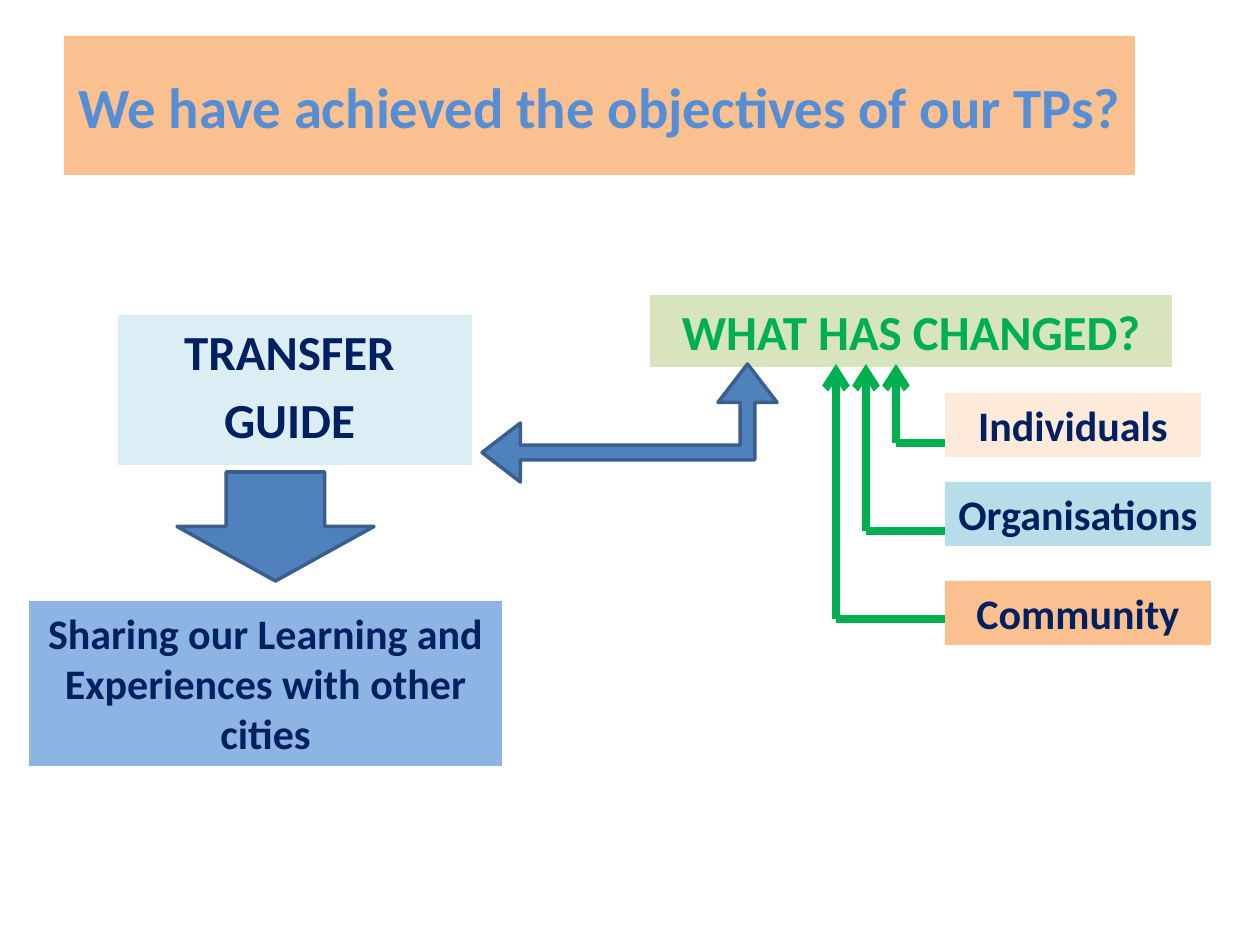
from lxml.etree import SubElement
from pptx import Presentation
from pptx.dml.color import RGBColor
from pptx.enum.shapes import MSO_CONNECTOR, MSO_SHAPE
from pptx.enum.text import MSO_ANCHOR, PP_ALIGN
from pptx.oxml.ns import qn
from pptx.util import Emu, Pt

PX = 914400 / 126
COLORS = {
    "orange": "FAC090", "title": "558ED5", "pale": "DBEEF4", "navy": "002060",
    "sky": "8EB4E3", "blue": "4F81BD", "edge": "3A5F8C", "lime": "D7E4BD",
    "green": "00B050", "peach": "FDEADA", "aqua": "B7DEE8",
}
HUES = {name: RGBColor.from_string(code) for name, code in COLORS.items()}

deck = Presentation()
deck.slide_width, deck.slide_height = Emu(round(1260 * PX)), Emu(round(945 * PX))
slide = deck.slides.add_slide(deck.slide_layouts[6])


def add_shape(kind, box, fill):
    shape = slide.shapes.add_shape(kind, *(Emu(round(n * PX)) for n in box))
    shape.shadow.inherit = False
    shape.fill.solid()
    shape.fill.fore_color.rgb = HUES[fill]
    shape.line.fill.background()
    return shape


def add_line(start, end, arrow=False):
    ends = (Emu(round(n * PX)) for n in (*start, *end))
    line = slide.shapes.add_connector(MSO_CONNECTOR.STRAIGHT, *ends)
    line.line.color.rgb = HUES["green"]
    line.line.width = Pt(4.5)
    if arrow:
        SubElement(line.line._get_or_add_ln(), qn("a:tailEnd"), type="arrow")
    SubElement(line._element.spPr, qn("a:effectLst"))


# Text boxes: place, fill, text colour, size, anchor, space before, paragraphs
TOP, MIDDLE = MSO_ANCHOR.TOP, MSO_ANCHOR.MIDDLE
boxes = [
    ((64, 36, 1071, 139), "orange", "title", 32.4, MIDDLE, 0,
     ["We have achieved the objectives of our TPs?"]),
    ((118, 315, 354, 150), "pale", "navy", 28, TOP, 5.6, ["TRANSFER ", "GUIDE "]),
    ((29, 601, 473, 165), "sky", "navy", 24, TOP, 0,
     ["Sharing our Learning and Experiences with other cities"]),
    ((650, 295, 522, 72), "lime", "green", 28, TOP, 0, ["WHAT HAS CHANGED?"]),
    ((945, 393, 256, 64), "peach", "navy", 24, TOP, 0, ["Individuals"]),
    ((945, 482, 266, 64), "aqua", "navy", 24, TOP, 0, ["Organisations"]),
    ((945, 581, 266, 64), "orange", "navy", 24, TOP, 0, ["Community"]),
]
for box, fill, color, size, anchor, gap, texts in boxes:
    frame = add_shape(MSO_SHAPE.RECTANGLE, box, fill).text_frame
    frame.word_wrap = True
    frame.vertical_anchor = anchor
    for i, text in enumerate(texts):
        para = frame.add_paragraph() if i else frame.paragraphs[0]
        para.alignment = PP_ALIGN.CENTER
        para.space_before = Pt(gap)
        run = para.add_run()
        run.text = text
        run.font.name = "Calibri"
        run.font.size = Pt(size)
        run.font.bold = True
        run.font.color.rgb = HUES[color]

# Green elbows from each group up to the question
for i in range(3):
    x, y = 896 - 30 * i, 443 + 88 * i
    add_line((945, y), (x, y))
    add_line((x, y), (x, 364), arrow=True)

# Block arrows
down = add_shape(MSO_SHAPE.DOWN_ARROW, (177, 472, 197, 109), "blue")
bent = add_shape(MSO_SHAPE.LEFT_UP_ARROW, (482, 364, 295, 118), "blue")
for i, share in enumerate((0.125, 0.25, 0.325)):
    bent.adjustments[i] = share
for arrow in (down, bent):
    arrow.line.color.rgb = HUES["edge"]
    arrow.line.width = Pt(2)

deck.save("out.pptx")
